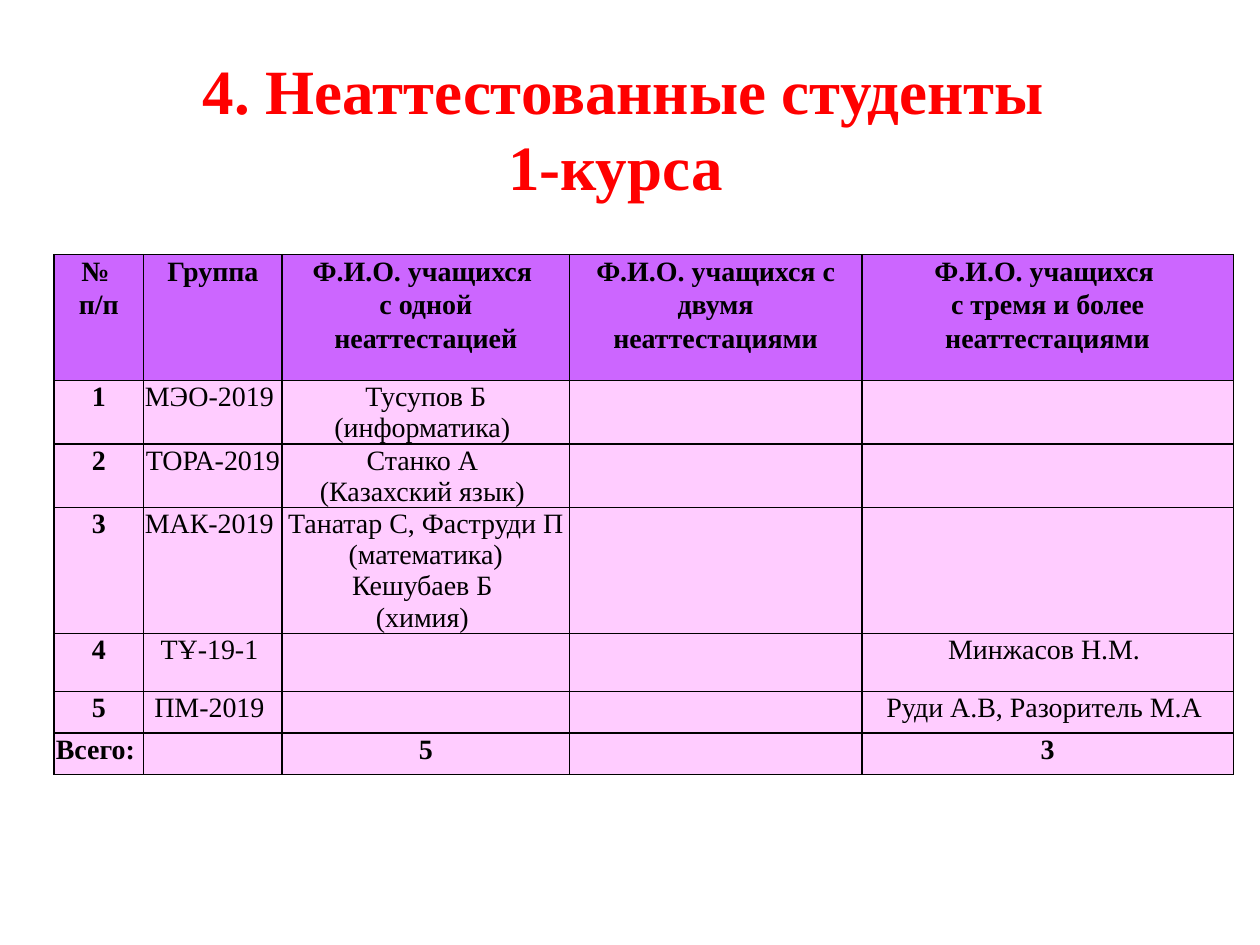
from lxml import etree
from pptx import Presentation
from pptx.dml.color import RGBColor
from pptx.enum.text import PP_ALIGN
from pptx.oxml.ns import qn
from pptx.util import Inches, Pt

LEFT, CENTER = PP_ALIGN.LEFT, PP_ALIGN.CENTER
FONT = "Times New Roman"
WIDTHS = [0.71, 1.1, 2.28, 2.32, 2.95]
HEIGHTS = [1, 0.5, 0.5, 1, 0.46, 0.33, 0.33]
ROWS = [
    ["№ \nп/п", "Группа", "Ф.И.О. учащихся \nс одной неаттестацией",
     "Ф.И.О. учащихся с двумя неаттестациями",
     "Ф.И.О. учащихся \nс тремя и более неаттестациями"],
    ["1", "МЭО-2019 ", "Тусупов Б\n(информатика) ", "", ""],
    ["2", "ТОРА-2019 ", "Станко А \n(Казахский язык) ", "", ""],
    ["3", "МАК-2019",
     "Танатар С, Фаструди П (математика)\nКешубаев Б \n(химия) ", "", ""],
    ["4", "ТҰ-19-1 ", "", "", "Минжасов Н.М. "],
    ["5", "ПМ-2019 ", "", "", "Руди А.В, Разоритель М.А "],
    ["Всего: ", "", "5", "", "3"],
]


def color(code):
    return RGBColor.from_string(code)


def style(para, size, code, bold):
    para.font.name = FONT
    para.font.size = Pt(size)
    para.font.bold = bold
    para.font.color.rgb = color(code)
    para.alignment = CENTER


prs = Presentation()
prs.slide_width, prs.slide_height = Inches(10), Inches(7.5)
slide = prs.slides.add_slide(prs.slide_layouts[6])

table = slide.shapes.add_table(
    len(ROWS), len(WIDTHS), Inches(0.43), Inches(2.02),
    Inches(sum(WIDTHS)), Inches(sum(HEIGHTS))).table
for col, width in zip(table.columns, WIDTHS):
    col.width = Inches(width)
for row, height in zip(table.rows, HEIGHTS):
    row.height = Inches(height)

for r, texts in enumerate(ROWS):
    head, total = r == 0, r == len(ROWS) - 1
    for c, text in enumerate(texts):
        cell = table.cell(r, c)
        cell.text = text
        cell.margin_left = cell.margin_right = Inches(0.07 if head else 0.01)
        cell.margin_top = Inches(0 if head else 0.01)
        cell.margin_bottom = 0
        for para in cell.text_frame.paragraphs:
            style(para, 16, "000000", head or total or c == 0)
            if head:
                para.line_spacing = 1.07
            if text == "МАК-2019":
                para.alignment = LEFT
        props = cell._tc.get_or_add_tcPr()
        for side in ("a:lnL", "a:lnR", "a:lnT", "a:lnB"):
            line = etree.SubElement(props, qn(side), w=str(Pt(1)))
            fill = etree.SubElement(line, qn("a:solidFill"))
            etree.SubElement(fill, qn("a:srgbClr"), val="000000")
        cell.fill.solid()
        cell.fill.fore_color.rgb = color("CC66FF" if head else "FFCCFF")

title = slide.shapes.add_textbox(
    Inches(0.98), Inches(0.36), Inches(7.81), Inches(1.31)).text_frame
title.word_wrap = True
title.text = " 4. Неаттестованные студенты\v1-курса"
style(title.paragraphs[0], 36, "FF0000", True)

prs.save("out.pptx")
